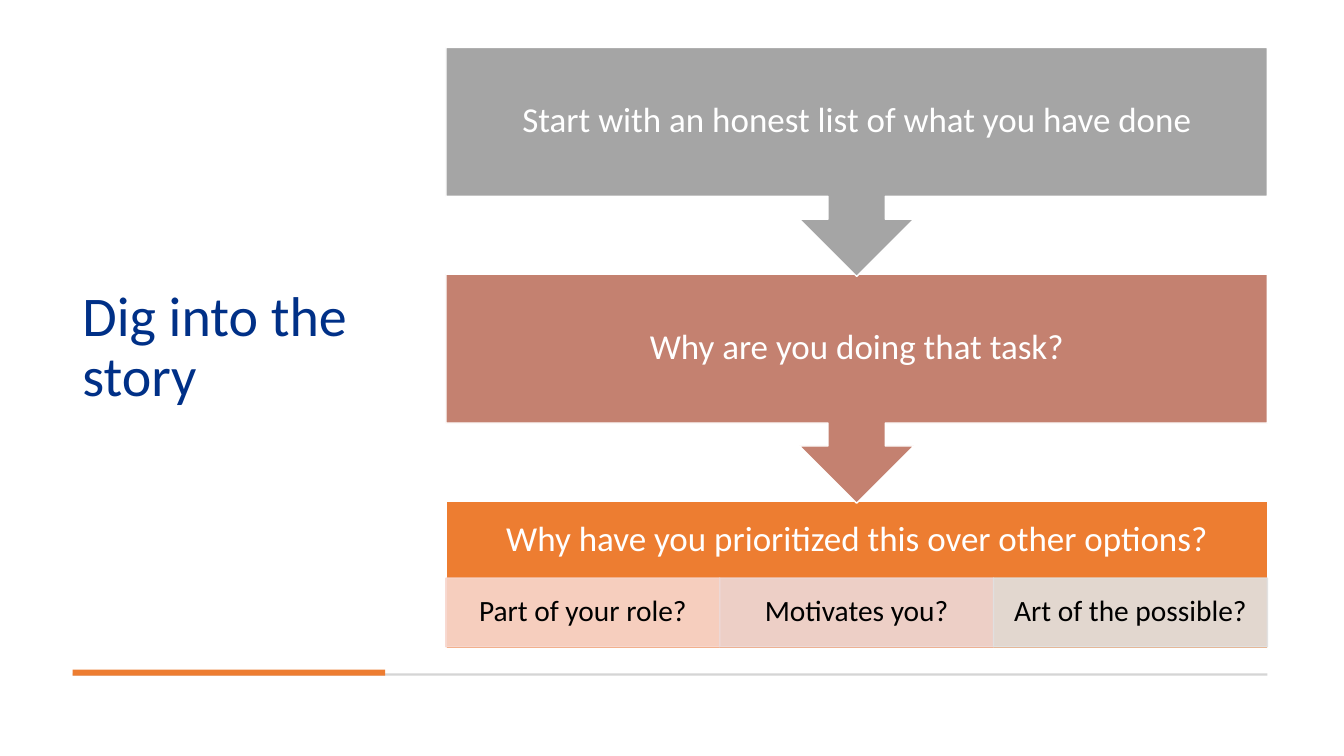
from lxml.etree import SubElement
from pptx import Presentation
from pptx.dml.color import RGBColor
from pptx.enum.shapes import MSO_SHAPE
from pptx.enum.text import MSO_ANCHOR, PP_ALIGN
from pptx.oxml.ns import qn
from pptx.util import Inches, Pt

WHITE = RGBColor(0xFF, 0xFF, 0xFF)
BLACK = RGBColor(0x00, 0x00, 0x00)
NAVY = RGBColor(0x00, 0x30, 0x87)
ORANGE = RGBColor(0xED, 0x7D, 0x31)
GRAY = RGBColor(0xA5, 0xA5, 0xA5)
RULE_GRAY = RGBColor(0xD5, 0xD5, 0xD5)
CLAY = RGBColor(0xC4, 0x81, 0x70)
PEACH = RGBColor(0xF8, 0xD7, 0xCE)
ROSE = RGBColor(0xED, 0xD9, 0xD7)
PALE_GRAY = RGBColor(0xE1, 0xE1, 0xE1)


def write(sp, text, size, color, align=PP_ALIGN.CENTER, inset=(0.19, 0.19)):
    tf = sp.text_frame
    tf.word_wrap = True
    tf.vertical_anchor = MSO_ANCHOR.MIDDLE
    tf.margin_left = tf.margin_right = Inches(inset[0])
    tf.margin_top = tf.margin_bottom = Inches(inset[1])
    p = tf.paragraphs[0]
    p.alignment = align
    p.line_spacing = 0.9
    r = p.add_run()
    r.text = text
    r.font.name = "Calibri"
    r.font.size = Pt(size)
    r.font.color.rgb = color


class FlowSlide:
    """Grid of 48 columns between the side margins, in rows of 0.75 inch."""
    LEFT, TOP = 0.72, 0.47
    COL, ROW = 11.85 / 48, 0.75

    def __init__(self, prs):
        self.s = prs.slides.add_slide(prs.slide_layouts[6])

    def place(self, col, row, cols, rows):
        return (Inches(self.LEFT + col * self.COL), Inches(self.TOP + row * self.ROW),
                Inches(cols * self.COL), Inches(rows * self.ROW))

    def shape(self, cell, fill, line=None, kind=MSO_SHAPE.RECTANGLE, alpha=None):
        sp = self.s.shapes.add_shape(kind, *self.place(*cell))
        sp.shadow.inherit = False
        sp.fill.solid()
        sp.fill.fore_color.rgb = fill
        if line is None:
            sp.line.fill.background()
        else:
            sp.line.color.rgb = line
            sp.line.width = Pt(1)
        if alpha:
            for clr in sp._element.spPr.iter(qn("a:srgbClr")):
                SubElement(clr, qn("a:alpha"), val=str(alpha * 1000))
        return sp

    def label(self, cell, text, size, color, **style):
        write(self.s.shapes.add_textbox(*self.place(*cell)), text, size, color, **style)

    def callout(self, row, text, fill):
        sp = self.shape((15, row, 33, 3.03), fill, WHITE, MSO_SHAPE.UP_ARROW_CALLOUT)
        sp.rotation = 180
        self.label((15, row, 33, 1.96), text, 25, WHITE)


def main():
    prs = Presentation()
    prs.slide_width, prs.slide_height = Inches(13.33), Inches(7.5)
    flow = FlowSlide(prs)

    # Title and footer rules
    flow.label((0, 0, 12.56, 7.96), "Dig into the story", 40, NAVY,
               align=PP_ALIGN.LEFT, inset=(0.1, 0.05))
    flow.shape((0, 8.28, 48, 0.03), RULE_GRAY)
    flow.shape((0, 8.23, 12.56, 0.08), ORANGE)

    # Last step with its three reasons
    flow.shape((15, 6, 33, 1.96), ORANGE, WHITE)
    flow.label((15, 6, 33, 1.05), "Why have you prioritized this over other options?", 25, WHITE)
    reasons = [("Part of your role?", PEACH), ("Motivates you?", ROSE),
               ("Art of the possible?", PALE_GRAY)]
    for i, (text, fill) in enumerate(reasons):
        sp = flow.shape((15 + 11 * i, 7.02, 11, 0.91), fill, fill, alpha=90)
        write(sp, text, 21, BLACK, inset=(0.16, 0.03))

    # Steps that point down to the next one
    flow.callout(3, "Why are you doing that task?", CLAY)
    flow.callout(0, "Start with an honest list of what you have done", GRAY)

    prs.save("out.pptx")


if __name__ == "__main__":
    main()
